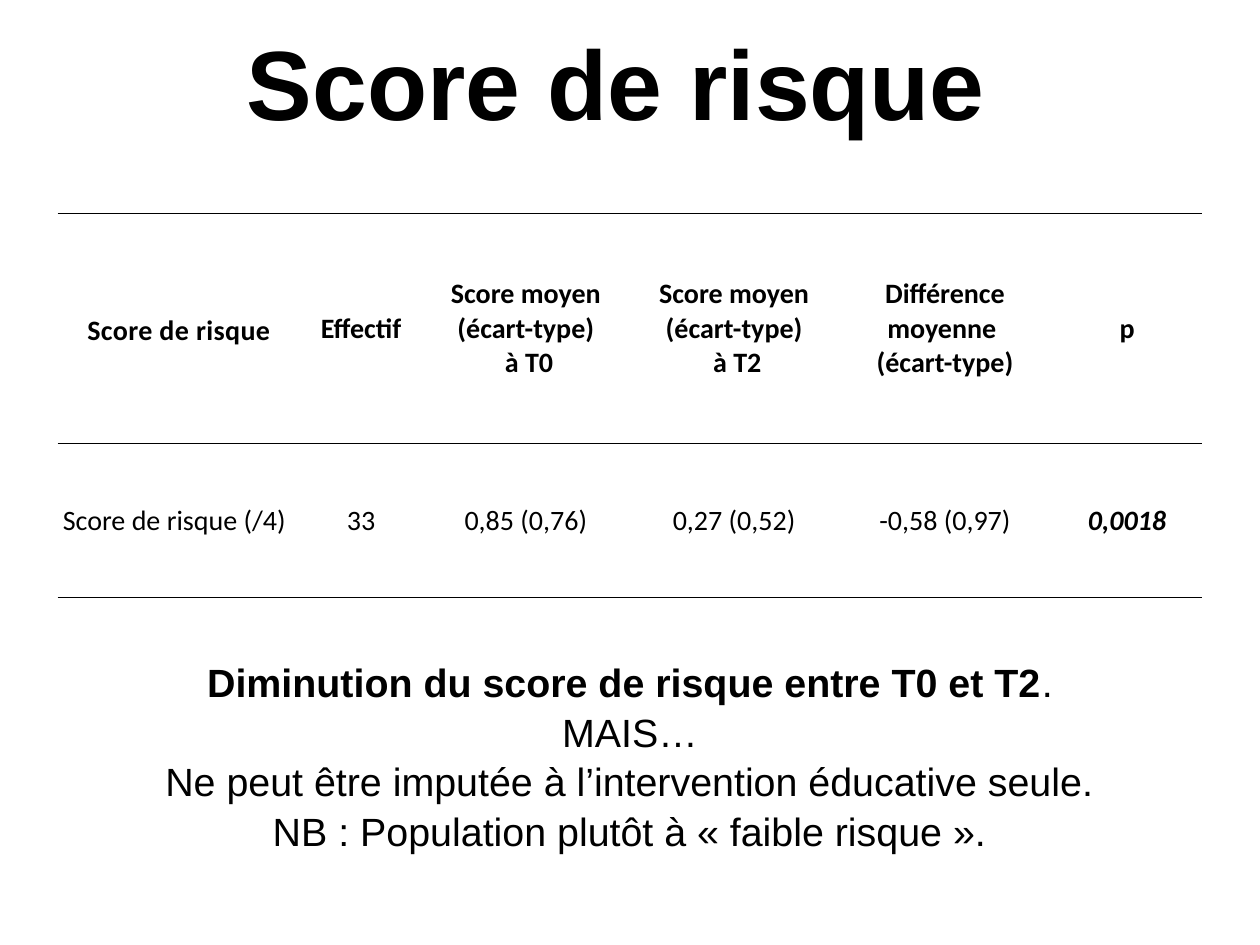
from dataclasses import dataclass

from lxml import etree
from pptx import Presentation
from pptx.dml.color import RGBColor
from pptx.enum.text import MSO_ANCHOR, MSO_AUTO_SIZE, PP_ALIGN
from pptx.oxml.ns import qn
from pptx.util import Cm, Pt

BLACK = RGBColor(0x00, 0x00, 0x00)
WHITE = RGBColor(0xFF, 0xFF, 0xFF)
CENTER = PP_ALIGN.CENTER
LEFT = PP_ALIGN.LEFT
MIDDLE = MSO_ANCHOR.MIDDLE
NO_AUTOFIT = MSO_AUTO_SIZE.NONE

MARGIN = Cm(0.15)
RULE_WIDTH = Pt(0.5)
MARGINS = {f"margin_{side}": MARGIN for side in ("left", "right", "top", "bottom")}
TITLE_FONT = {"name": "Arial", "size": Pt(80)}
BODY_FONT = {"name": "Arial", "size": Pt(32)}
TABLE_FONT = {"name": "Calibri", "size": Pt(22.8)}

COLUMN_WIDTHS = (6.96, 3.48, 5.97, 5.97, 6.12, 4.32)
ROW_HEIGHTS = (6.6, 4.42)


@dataclass(frozen=True)
class Piece:
    text: str
    bold: bool = False
    italic: bool = False


@dataclass(frozen=True)
class Line:
    pieces: tuple[Piece, ...]
    alignment: PP_ALIGN = CENTER
    spacing: float = 1.0
    tracking: int = 0


@dataclass(frozen=True)
class Block:
    left: float
    top: float
    width: float
    height: float
    font: dict
    lines: tuple[Line, ...]
    gap: float = 0


def plain(text: str, alignment: PP_ALIGN = CENTER) -> Line:
    return Line((Piece(text),), alignment)


def strong(text: str, **options) -> Line:
    return Line((Piece(text, bold=True),), **options)


def mean_score(time: str) -> tuple[Line, ...]:
    return strong("Score moyen"), strong("(écart-type)"), strong(f" à {time}")


TITLE = Block(2.64, 0.18, 30.84, 4.27, TITLE_FONT, (strong("Score de risque "),))
CONCLUSION = Block(
    2.64, 17.65, 30.84, 8.08, BODY_FONT,
    (
        Line((Piece("Diminution du score de risque entre T0 et T2", bold=True), Piece("."))),
        plain("MAIS…"),
        plain("Ne peut être imputée à l’intervention éducative seule."),
        plain("NB : Population plutôt à « faible risque »."),
    ),
    gap=1.8,
)
TABLE_ROWS = (
    (
        (strong("Score de risque", spacing=1.15, tracking=30),),
        (strong("Effectif"),),
        mean_score("T0"),
        mean_score("T2"),
        (strong("Différence moyenne "), strong("(écart-type)")),
        (strong("p"),),
    ),
    (
        (plain("Score de risque (/4)", LEFT),),
        (plain("33"),),
        (plain("0,85 (0,76)"),),
        (plain("0,27 (0,52)"),),
        (plain("-0,58 (0,97)"),),
        (Line((Piece("0,0018", bold=True, italic=True),)),),
    ),
)


def apply_format(target, values: dict) -> None:
    for name, value in values.items():
        setattr(target, name, value)


def write_lines(text_frame, lines: tuple[Line, ...], font: dict, gap: float = 0) -> None:
    for index, line in enumerate(lines):
        paragraph = text_frame.add_paragraph() if index else text_frame.paragraphs[0]
        properties = paragraph._p.get_or_add_pPr()
        properties.set("marL", "0")
        properties.set("indent", "0")
        apply_format(paragraph, {
            "alignment": line.alignment,
            "line_spacing": line.spacing,
            "space_before": Pt(gap if index else 0),
            "space_after": Pt(0),
        })
        etree.SubElement(properties, qn("a:buNone"))
        for piece in line.pieces:
            run = paragraph.add_run()
            run.text = piece.text
            apply_format(run.font, {**font, "bold": piece.bold, "italic": piece.italic})
            run.font.color.rgb = BLACK
            if line.tracking:
                run.font._element.set("spc", str(line.tracking))


def fill_placeholder(shape, block: Block) -> None:
    apply_format(shape, {
        name: Cm(getattr(block, name)) for name in ("left", "top", "width", "height")
    })
    apply_format(shape.text_frame, {
        **MARGINS,
        "word_wrap": True,
        "auto_size": NO_AUTOFIT,
        "vertical_anchor": MIDDLE,
    })
    write_lines(shape.text_frame, block.lines, block.font, block.gap)


def set_borders(cell) -> None:
    properties = cell._tc.get_or_add_tcPr()
    for side in ("lnL", "lnR", "lnT", "lnB"):
        border = etree.SubElement(properties, qn(f"a:{side}"))
        if side in ("lnT", "lnB"):
            border.set("w", str(RULE_WIDTH))
            fill = etree.SubElement(border, qn("a:solidFill"))
            etree.SubElement(fill, qn("a:srgbClr")).set("val", str(BLACK))
        else:
            etree.SubElement(border, qn("a:noFill"))


def add_score_table(slide) -> None:
    table = slide.shapes.add_table(
        len(ROW_HEIGHTS), len(COLUMN_WIDTHS), Cm(1.65), Cm(6.12),
        Cm(sum(COLUMN_WIDTHS)), Cm(sum(ROW_HEIGHTS)),
    ).table
    apply_format(table, {"first_row": False, "horz_banding": False})
    for column, width in zip(table.columns, COLUMN_WIDTHS):
        column.width = Cm(width)
    for row, height, contents in zip(table.rows, ROW_HEIGHTS, TABLE_ROWS):
        row.height = Cm(height)
        for cell, lines in zip(row.cells, contents):
            apply_format(cell, {**MARGINS, "vertical_anchor": MIDDLE})
            set_borders(cell)
            cell.fill.solid()
            cell.fill.fore_color.rgb = WHITE
            write_lines(cell.text_frame, lines, TABLE_FONT)


def main() -> None:
    presentation = Presentation()
    presentation.slide_width = Cm(36.12)
    presentation.slide_height = Cm(27.1)
    slide = presentation.slides.add_slide(presentation.slide_layouts[1])
    fill_placeholder(slide.shapes.title, TITLE)
    fill_placeholder(slide.placeholders[1], CONCLUSION)
    add_score_table(slide)
    presentation.save("out.pptx")


if __name__ == "__main__":
    main()
